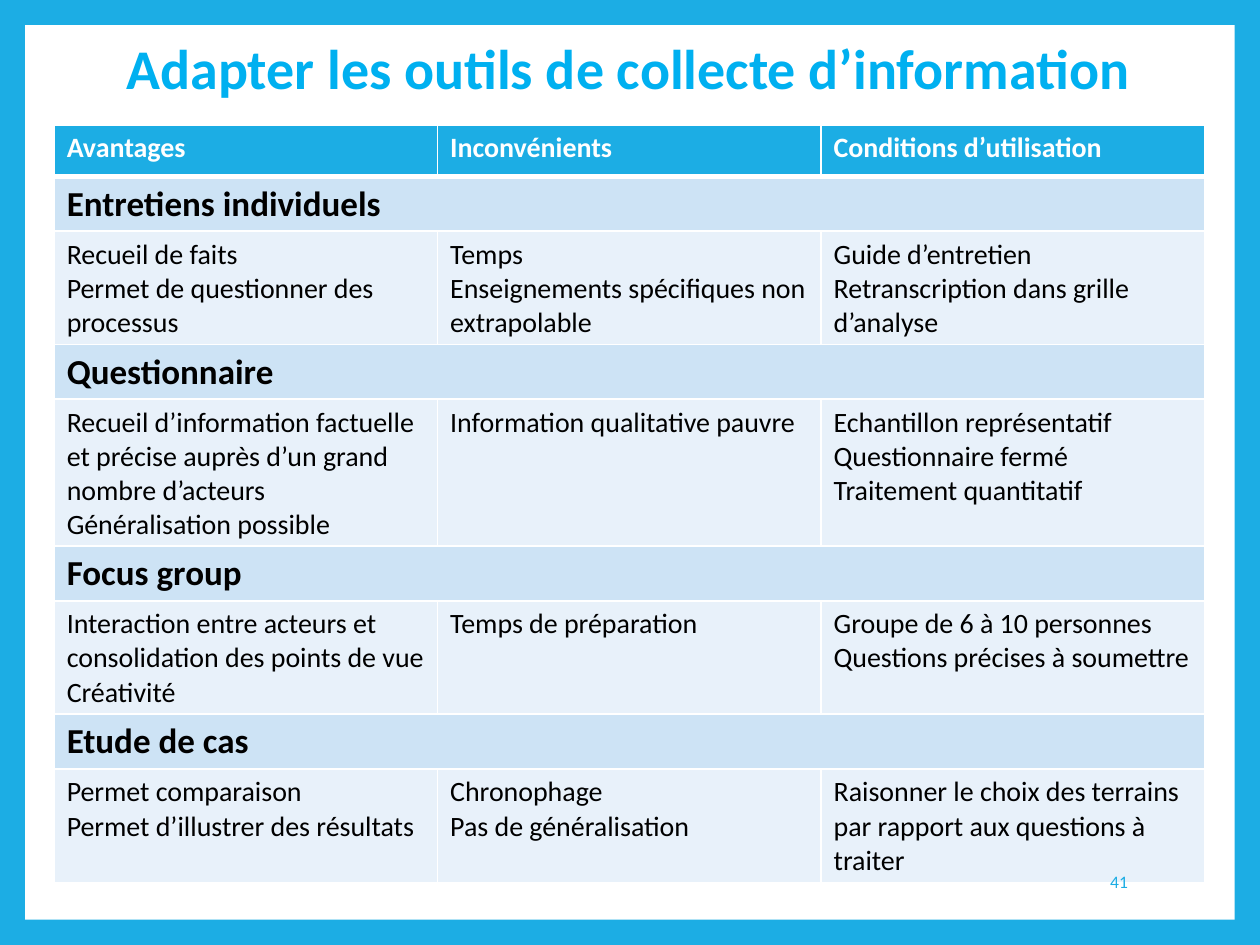
from pptx import Presentation
from pptx.dml.color import RGBColor
from pptx.enum.shapes import MSO_SHAPE as Shape
from pptx.enum.text import MSO_ANCHOR as Anchor, PP_ALIGN as Align
from pptx.oxml import parse_xml
from pptx.oxml.ns import nsdecls
from pptx.util import Inches, Pt

FONT = "Calibri"
BLUE, WHITE, BLACK = "1CADE4", "FFFFFF", "000000"
TITLE_BLUE, BAND_BLUE, PALE_BLUE = "00B0F0", "CDE3F5", "E8F1FA"

HEADINGS = ["Avantages", "Inconvénients", "Conditions d’utilisation"]
TOOLS = [
    ("Entretiens individuels", [
        ["Recueil de faits", "Permet de questionner des processus"],
        ["Temps", "Enseignements spécifiques non extrapolable"],
        ["Guide d’entretien", "Retranscription dans grille d’analyse"],
    ]),
    ("Questionnaire", [
        ["Recueil d’information factuelle et précise auprès d’un grand nombre d’acteurs",
         "Généralisation possible"],
        ["Information qualitative pauvre"],
        ["Echantillon représentatif", "Questionnaire fermé", "Traitement quantitatif"],
    ]),
    ("Focus group", [
        ["Interaction entre acteurs et consolidation des points de vue", "Créativité"],
        ["Temps de préparation"],
        ["Groupe de 6 à 10 personnes", "Questions précises à soumettre"],
    ]),
    ("Etude de cas", [
        ["Permet comparaison", "Permet d’illustrer des résultats"],
        ["Chronophage", "Pas de généralisation"],
        ["Raisonner le choix des terrains par rapport aux questions à traiter"],
    ]),
]


def color(hex_value):
    return RGBColor.from_string(hex_value)


def write(frame, lines, size, hex_value, bold=False, align=Align.LEFT):
    frame.word_wrap = True
    for index, line in enumerate(lines):
        paragraph = frame.paragraphs[0] if index == 0 else frame.add_paragraph()
        paragraph.alignment = align
        run = paragraph.add_run()
        run.text = line
        run.font.name = FONT
        run.font.size = Pt(size)
        run.font.bold = bold
        run.font.color.rgb = color(hex_value)


def add_frame(slide, left, top, width, height):
    slide.background.fill.solid()
    slide.background.fill.fore_color.rgb = color(BLUE)
    panel = slide.shapes.add_shape(Shape.RECTANGLE, left, top, width, height)
    panel.shadow.inherit = False
    panel.fill.solid()
    panel.fill.fore_color.rgb = color(WHITE)
    panel.line.fill.background()


def add_label(slide, left, top, width, height, line, size, hex_value, bold, align):
    label = slide.shapes.add_textbox(left, top, width, height).text_frame
    label.vertical_anchor = Anchor.MIDDLE
    write(label, [line], size, hex_value, bold, align)
    label.paragraphs[0].line_spacing = 0.9


def style_cell(cell, fill, bottom=1):
    properties = cell._tc.get_or_add_tcPr()
    for side, points in (("L", 1), ("R", 1), ("T", 1), ("B", bottom)):
        properties.append(parse_xml(
            f'<a:ln{side} {nsdecls("a")} w="{Pt(points)}"><a:solidFill>'
            f'<a:srgbClr val="{WHITE}"/></a:solidFill></a:ln{side}>'))
    cell.fill.solid()
    cell.fill.fore_color.rgb = color(fill)


def add_tools_table(slide, left, top, width, row_height):
    rows = 1 + 2 * len(TOOLS)
    table = slide.shapes.add_table(
        rows, len(HEADINGS), left, top, width, row_height * rows).table
    for column, heading in enumerate(HEADINGS):
        cell = table.cell(0, column)
        style_cell(cell, BLUE, bottom=3)
        write(cell.text_frame, [heading], 16, WHITE, bold=True)
    for index, (tool, details) in enumerate(TOOLS):
        band = 1 + 2 * index
        for column, lines in enumerate(details):
            style_cell(table.cell(band, column), BAND_BLUE)
            cell = table.cell(band + 1, column)
            style_cell(cell, PALE_BLUE)
            write(cell.text_frame, lines, 16, BLACK)
        table.cell(band, 0).merge(table.cell(band, len(HEADINGS) - 1))
        write(table.cell(band, 0).text_frame, [tool], 20, BLACK, bold=True)


def main():
    deck = Presentation()
    deck.slide_width, deck.slide_height = Inches(10), Inches(7.5)
    slide = deck.slides.add_slide(deck.slide_layouts[6])
    add_frame(slide, Inches(0.2), Inches(0.2), Inches(9.6), Inches(7.1))
    add_label(slide, Inches(0.49), Inches(0.21), Inches(9), Inches(0.71),
              "Adapter les outils de collecte d’information",
              32, TITLE_BLUE, True, Align.CENTER)
    add_tools_table(slide, Inches(0.43), Inches(0.99), Inches(9.13), Inches(0.41))
    add_label(slide, Inches(7.65), Inches(6.81), Inches(1.4), Inches(0.4),
              "41", 10, BLUE, False, Align.RIGHT)
    deck.save("out.pptx")


if __name__ == "__main__":
    main()
